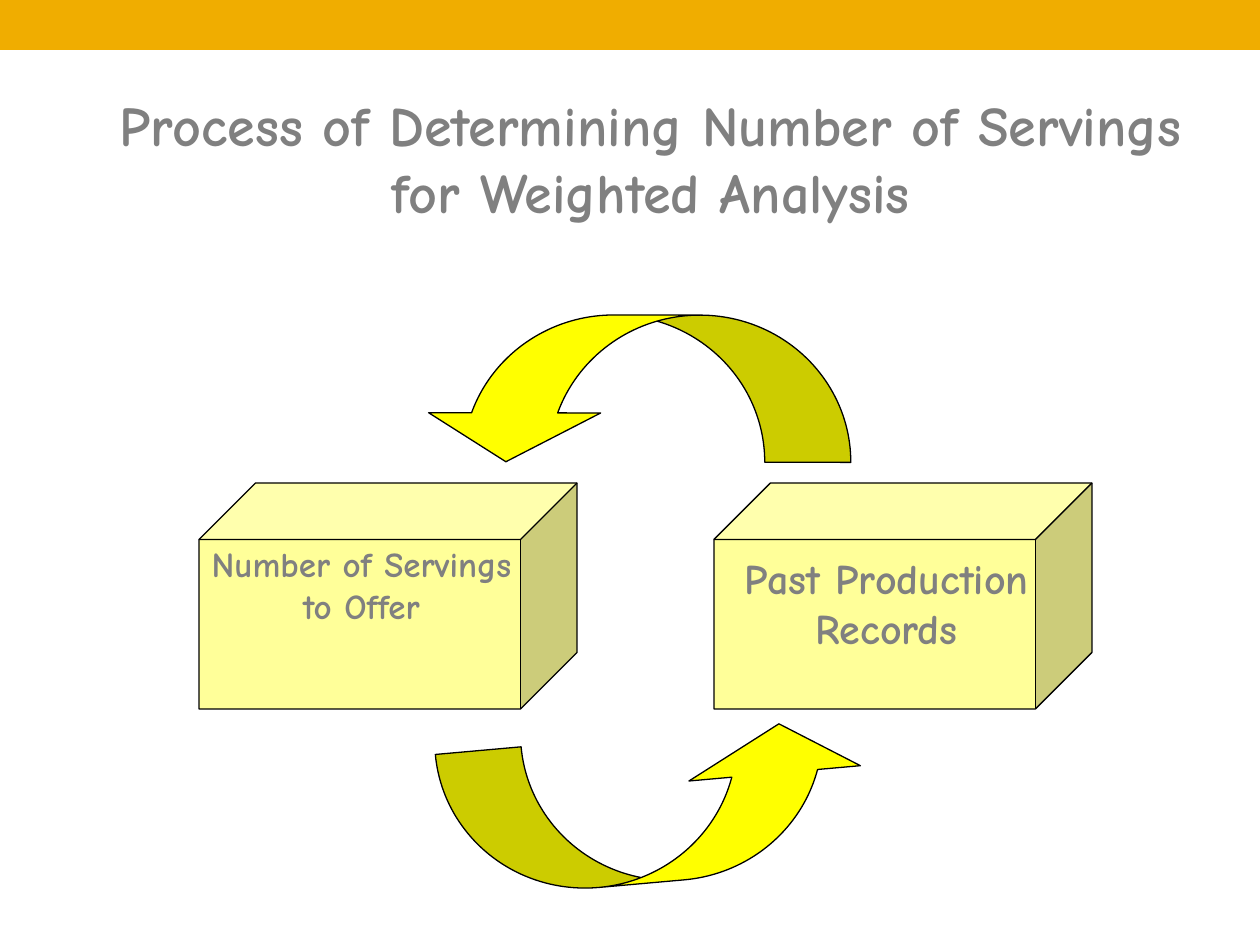
from pptx import Presentation
from pptx import util as u
from pptx.dml.color import RGBColor
from pptx.enum import shapes, text
from pptx.oxml.ns import qn

FONT = "Comic Neue"
COLORS = {
    "band": "F0AD00",
    "box": "FFFF99",
    "arrow": "FFFF00",
    "outline": "000000",
    "text": "808080",
}
BAND = (0, 0, 1260, 50)
ARROW_SIZE = (431, 147)
ARROW_ADJUSTMENTS = (0.586, 1.171, 0.333)
ARROWS = [
    {"corner": (441, 735), "rotation": 174.9},
    {"corner": (420, 315), "rotation": 0.1},
]
BOX_SIZE = (378, 226)
BOX_TOP = 483
BOX_LEFTS = (199, 714)
LABELS = [
    ("Past Production Records", (724, 546, 325, 165), 24),
    ("Number of Servings to Offer", (199, 536, 325, 140), 20),
    ("Process of Determining Number of Servings for Weighted Analysis",
     (105, 84, 1092, 147), 32),
]


def px(*lengths):
    return [u.Emu(round(length * 914400 / 126)) for length in lengths]


def add_block(slide, kind, area, color, outlined=True, adjustments=()):
    block = slide.shapes.add_shape(kind, *px(*area))
    block.shadow.inherit = False
    block.fill.solid()
    block.fill.fore_color.rgb = RGBColor.from_string(COLORS[color])
    if outlined:
        block.line.color.rgb = RGBColor.from_string(COLORS["outline"])
        block.line.width = u.Pt(0.75)
    else:
        block.line.fill.background()
    for index, value in enumerate(adjustments):
        block.adjustments[index] = value
    return block


def add_label(slide, wording, area, size, color="text", bold=True):
    label = slide.shapes.add_textbox(*px(*area))
    frame = label.text_frame
    frame.word_wrap = True
    frame.auto_size = text.MSO_AUTO_SIZE.SHAPE_TO_FIT_TEXT
    paragraph = frame.paragraphs[0]
    paragraph.alignment = text.PP_ALIGN.CENTER
    run = paragraph.add_run()
    run.text = wording
    run.font.name = FONT
    run.font.size = u.Pt(size)
    run.font.bold = bold
    run.font.color.rgb = RGBColor.from_string(COLORS[color])


def add_arrow(slide, corner, rotation):
    arrow = add_block(slide, shapes.MSO_SHAPE.CURVED_DOWN_ARROW,
                      corner + ARROW_SIZE, "arrow",
                      adjustments=ARROW_ADJUSTMENTS)
    arrow.rotation = rotation
    arrow.element.spPr.find(qn("a:xfrm")).set("flipH", "1")


def main():
    deck = Presentation()
    deck.slide_width, deck.slide_height = px(1260, 945)
    slide = deck.slides.add_slide(deck.slide_layouts[6])
    lower_arrow, upper_arrow = ARROWS

    add_block(slide, shapes.MSO_SHAPE.RECTANGLE, BAND, "band", outlined=False)
    add_arrow(slide, **lower_arrow)
    for left in BOX_LEFTS:
        add_block(slide, shapes.MSO_SHAPE.CUBE, (left, BOX_TOP) + BOX_SIZE,
                  "box", adjustments=(0.25,))
    for wording, area, size in LABELS:
        add_label(slide, wording, area, size)
    add_arrow(slide, **upper_arrow)

    deck.save("out.pptx")


if __name__ == "__main__":
    main()
